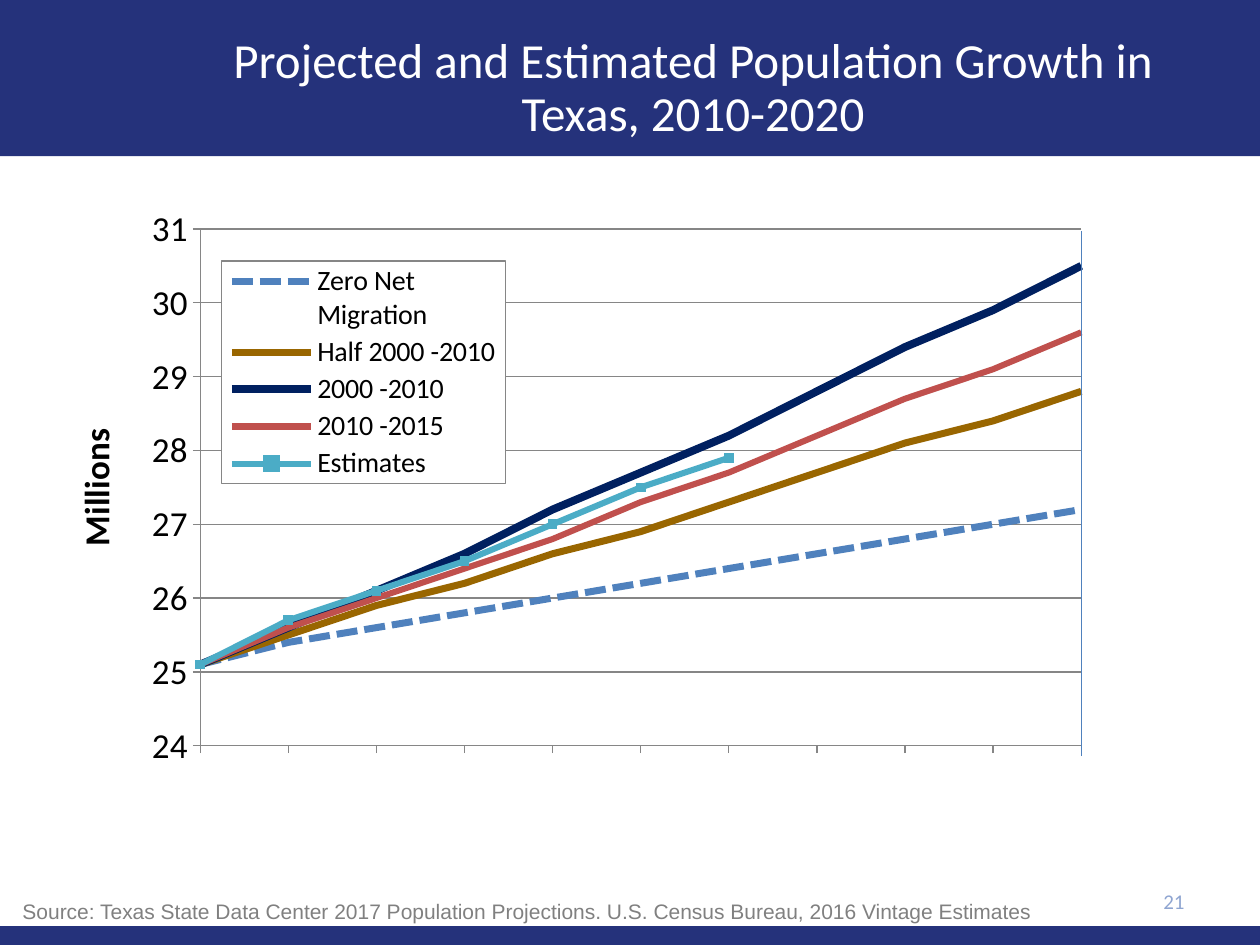
import pptx
import pptx.chart.data
import pptx.dml.color
import pptx.enum.chart
import pptx.enum.dml
import pptx.enum.shapes
import pptx.enum.text
import pptx.oxml
import pptx.oxml.ns
import pptx.util

Pt = pptx.util.Pt
qn = pptx.oxml.ns.qn
Dash = pptx.enum.dml.MSO_LINE
Mark = pptx.enum.chart.XL_MARKER_STYLE
Tick = pptx.enum.chart.XL_TICK_MARK
Align = pptx.enum.text.PP_ALIGN
Anchor = pptx.enum.text.MSO_ANCHOR

# Content
NAVY, GREY = "25327B", "868686"
TITLE = "Projected and Estimated Population Growth in Texas, 2010-2020"
SOURCE = ("Source: Texas State Data Center 2017 Population Projections. "
          "U.S. Census Bureau, 2016 Vintage Estimates")
YEARS = [str(year) for year in range(2010, 2021)]
# name, colour, line width, dash, marker, millions of people
SERIES = [
    ("Zero Net Migration", "4F81BD", 4, Dash.SQUARE_DOT, Mark.NONE,
     [25.1, 25.4, 25.6, 25.8, 26, 26.2, 26.4, 26.6, 26.8, 27, 27.2]),
    ("Half 2000 -2010", "996600", 4, Dash.SOLID, Mark.NONE,
     [25.1, 25.5, 25.9, 26.2, 26.6, 26.9, 27.3, 27.7, 28.1, 28.4, 28.8]),
    ("2000 -2010", "002060", 4.5, Dash.SOLID, Mark.NONE,
     [25.1, 25.6, 26.1, 26.6, 27.2, 27.7, 28.2, 28.8, 29.4, 29.9, 30.5]),
    ("2010 -2015", "C0504D", 3.5, Dash.SOLID, Mark.NONE,
     [25.1, 25.6, 26, 26.4, 26.8, 27.3, 27.7, 28.2, 28.7, 29.1, 29.6]),
    ("Estimates", "4BACC6", 3.5, Dash.SOLID, Mark.SQUARE,
     [25.1, 25.7, 26.1, 26.5, 27, 27.5, 27.9]),
]
# text, box, size, font, colour, alignment, anchor, line spacing
TEXTS = [
    (TITLE, (126, 12.24, 540, 77.76), 28, "Calibri", "FFFFFF",
     Align.CENTER, Anchor.MIDDLE, 0.9),
    ("21", (516.24, 500.4, 167.76, 28.8), 12, "Calibri", "8FA5D1",
     Align.RIGHT, Anchor.MIDDLE, 1),
    (SOURCE, (5.76, 509.76, 689.76, 21.6), 12, "Arial", "808080",
     Align.LEFT, Anchor.TOP, 1),
]
BANDS = [(0, 0, 720, 89.28), (0, 529.2, 720, 10.8)]


def rgb(code):
    return pptx.dml.color.RGBColor.from_string(code)


def paint(part, code):
    part.fill.solid()
    part.fill.fore_color.rgb = rgb(code)


def stroke(line, code, width):
    line.color.rgb = rgb(code)
    line.width = Pt(width)


def style(font, size, name="Calibri", code="000000", bold=False):
    font.size, font.name, font.bold = Pt(size), name, bold
    font.color.rgb = rgb(code)


def place(node, index, x, y, w, h, inner=False):
    """Give a chart part a fixed place, in fractions of the chart."""
    for old in node.findall(qn("c:layout")):
        node.remove(old)
    items = [("layoutTarget", "inner")] if inner else []
    items += [("xMode", "edge"), ("yMode", "edge"),
              ("x", x), ("y", y), ("w", w), ("h", h)]
    body = "".join(f'<c:{tag} val="{val}"/>' for tag, val in items)
    node.insert(index, pptx.oxml.parse_xml(
        f'<c:layout {pptx.oxml.ns.nsdecls("c")}><c:manualLayout>{body}'
        '</c:manualLayout></c:layout>'))


deck = pptx.Presentation()
deck.slide_width, deck.slide_height = Pt(720), Pt(540)
slide = deck.slides.add_slide(deck.slide_layouts[6])
shapes = slide.shapes

# Top and bottom bands
for box in BANDS:
    band = shapes.add_shape(pptx.enum.shapes.MSO_SHAPE.RECTANGLE, *map(Pt, box))
    band.shadow.inherit = False
    paint(band, NAVY)
    band.line.fill.background()

# Chart and its series
data = pptx.chart.data.CategoryChartData()
data.categories = YEARS
for name, *_, vals in SERIES:
    data.add_series(name, vals + [None] * (len(YEARS) - len(vals)))
chart = shapes.add_chart(pptx.enum.chart.XL_CHART_TYPE.LINE_MARKERS,
                         *map(Pt, (36, 108, 648, 374.4)), data).chart
chart.has_title = False
style(chart.font, 20)
for line, (_, code, width, dash, mark, _) in zip(chart.plots[0].series, SERIES):
    line.smooth = False
    stroke(line.format.line, code, width)
    line.format.line.dash_style = dash
    line.marker.style = mark
    if mark != Mark.NONE:
        line.marker.size = 5
        paint(line.marker.format, code)
        stroke(line.marker.format.line, code, 0.75)

# Axes
years, count = chart.category_axis, chart.value_axis
for axis in (years, count):
    axis.major_tick_mark, axis.minor_tick_mark = Tick.OUTSIDE, Tick.NONE
    stroke(axis.format.line, GREY, 0.75)
years.tick_label_position = pptx.enum.chart.XL_TICK_LABEL_POSITION.NONE
count.minimum_scale, count.maximum_scale, count.major_unit = 24, 31, 1
count.tick_labels.number_format = "0"
count.tick_labels.number_format_is_linked = False
count.has_major_gridlines = True
stroke(count.major_gridlines.format.line, GREY, 0.75)
head = count.axis_title.text_frame
head.text = "Millions"
style(head.paragraphs[0].font, 20, bold=True)

# Lines start on the value axis; the plot has a fixed place
count._element.find(qn("c:crosses")).addnext(pptx.oxml.parse_xml(
    f'<c:crossBetween {pptx.oxml.ns.nsdecls("c")} val="midCat"/>'))
place(chart._chartSpace.chart.plotArea, 0, 0.121, 0.061, 0.777, 0.789, True)

# Legend over the plot
chart.has_legend = True
key = chart.legend
key.position = pptx.enum.chart.XL_LEGEND_POSITION.LEFT
key.include_in_layout = True
style(key.font, 16)
place(key._element, 1, 0.14, 0.11, 0.25, 0.34)
key._element.find(qn("c:overlay")).addnext(pptx.oxml.parse_xml(
    f'<c:spPr {pptx.oxml.ns.nsdecls("c", "a")}>'
    '<a:solidFill><a:srgbClr val="FFFFFF"/></a:solidFill><a:ln w="9525">'
    f'<a:solidFill><a:srgbClr val="{GREY}"/></a:solidFill></a:ln></c:spPr>'))

# Title, page number and source
for text, box, size, name, code, align, anchor, gap in TEXTS:
    frame = shapes.add_textbox(*map(Pt, box)).text_frame
    frame.word_wrap = True
    frame.vertical_anchor = anchor
    para = frame.paragraphs[0]
    para.text, para.alignment, para.line_spacing = text, align, gap
    style(para.font, size, name, code)

# Right edge of the plot
edge = shapes.add_connector(pptx.enum.shapes.MSO_CONNECTOR.STRAIGHT,
                            *map(Pt, (617.76, 432, 617.76, 131.76)))
stroke(edge.line, "4F81BD", 0.5)
edge._element.spPr.append(pptx.oxml.parse_xml(
    f'<a:effectLst {pptx.oxml.ns.nsdecls("a")}/>'))

deck.save("out.pptx")
